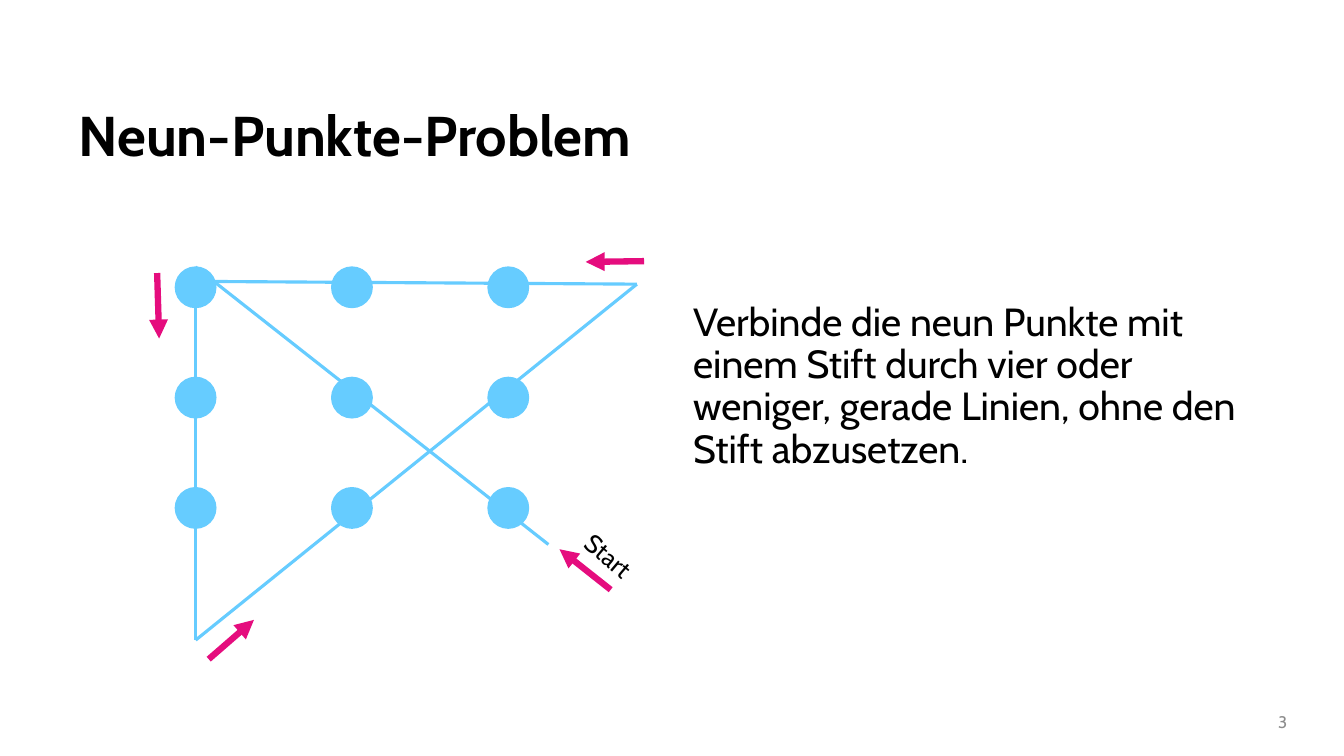
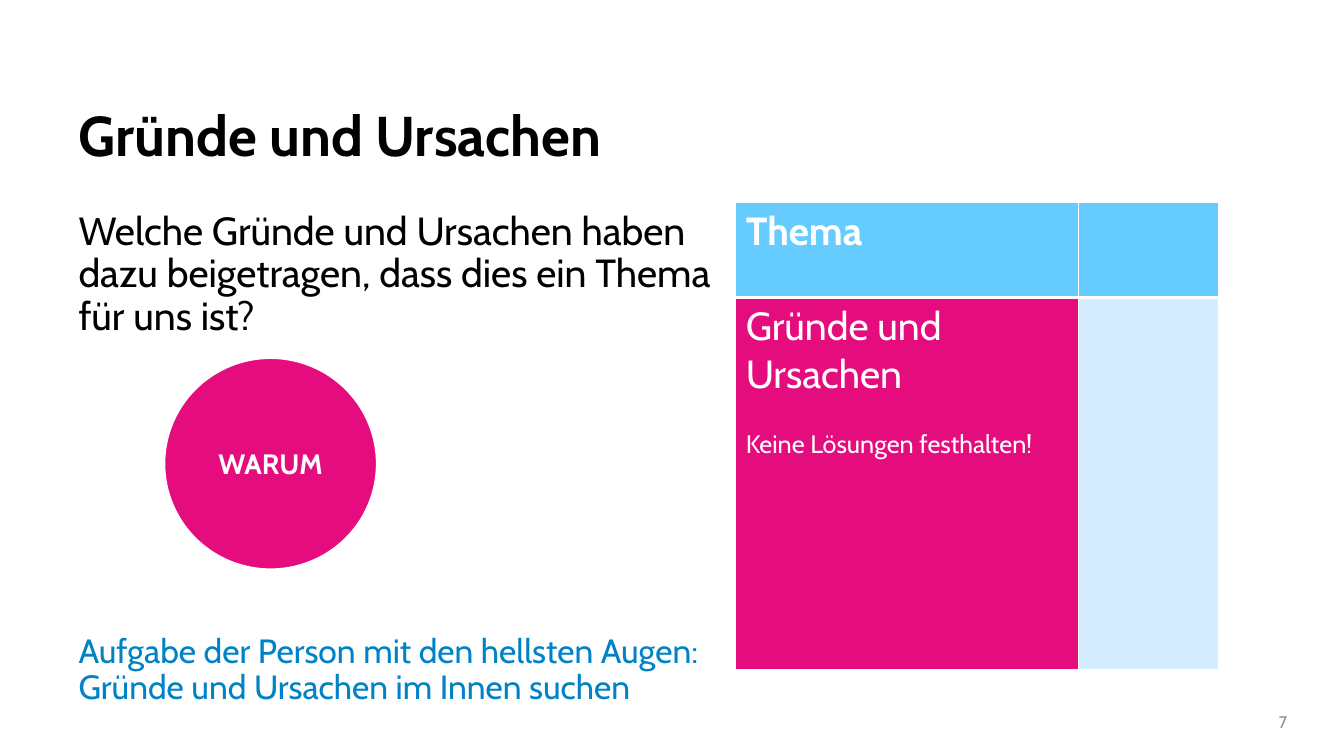
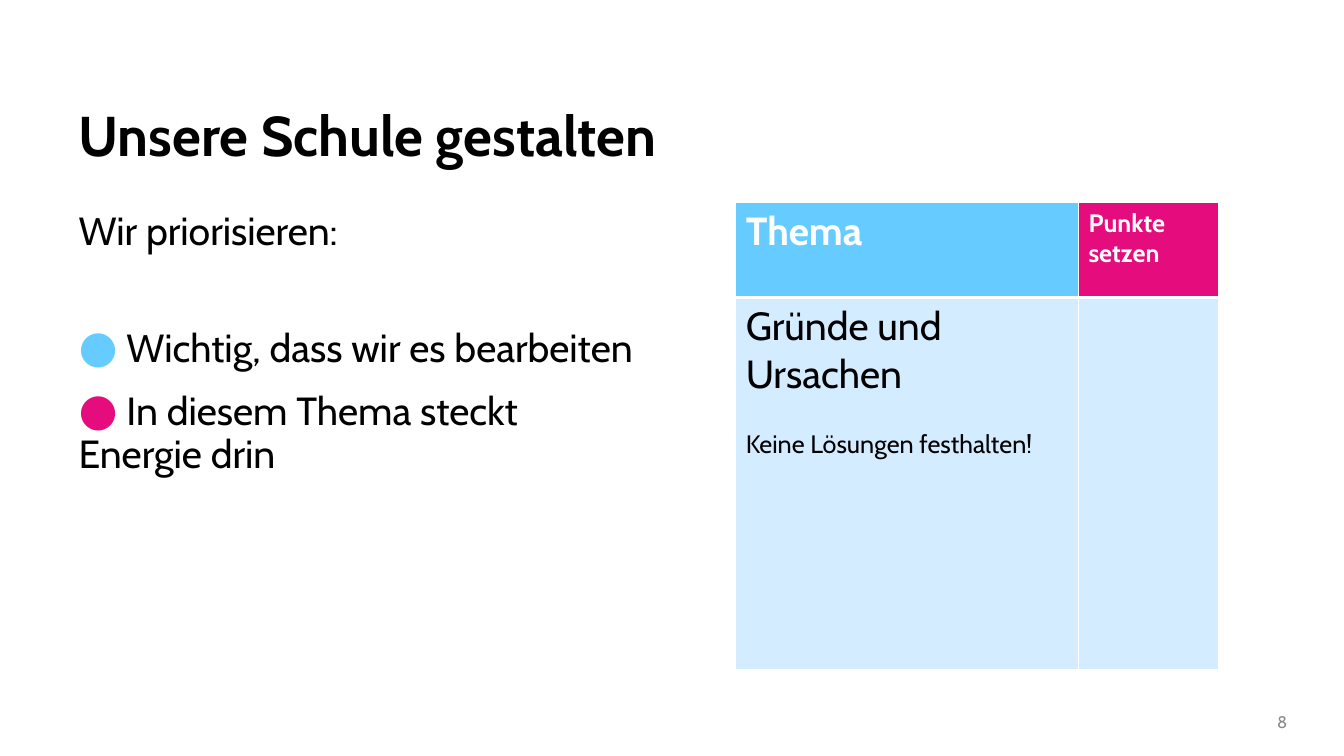
from lxml import etree
from pptx import Presentation
from pptx.dml.color import RGBColor
from pptx.enum.shapes import MSO_CONNECTOR, MSO_SHAPE
from pptx.enum.text import MSO_ANCHOR, PP_ALIGN
from pptx.oxml.ns import qn
from pptx.util import Cm, Pt

FONT = "Cabin"
BLACK = RGBColor(0x00, 0x00, 0x00)
WHITE = RGBColor(0xFF, 0xFF, 0xFF)
GRAY = RGBColor(0x8C, 0x8C, 0x8C)
BLUE = RGBColor(0x66, 0xCC, 0xFF)
PALE_BLUE = RGBColor(0xD3, 0xEC, 0xFF)
DARK_BLUE = RGBColor(0x00, 0x82, 0xC7)
PINK = RGBColor(0xE5, 0x0D, 0x7E)
OVAL = MSO_SHAPE.OVAL
STRAIGHT = MSO_CONNECTOR.STRAIGHT
MIDDLE = MSO_ANCHOR.MIDDLE
CENTER = PP_ALIGN.CENTER
RIGHT = PP_ALIGN.RIGHT


def style(p, size, color, bold=False):
    for r in p.runs:
        r.font.name = FONT
        r.font.size = Pt(size)
        r.font.color.rgb = color
        r.font.bold = bold


def add_text(s, box, text, size, color=BLACK, bold=False, spacing=0.9):
    sp = s.shapes.add_textbox(*[Cm(v) for v in box])
    tf = sp.text_frame
    tf.word_wrap = True
    tf.text = text
    for p in tf.paragraphs:
        p.line_spacing = spacing
        style(p, size, color, bold)
    return sp


prs = Presentation()
prs.slide_width = Cm(33.87)
prs.slide_height = Cm(19.05)

slides = []
for title, number in [
    ("Neun-Punkte-Problem", "3"),
    ("Gründe und Ursachen", "7"),
    ("Unsere Schule gestalten", "8"),
]:
    s = prs.slides.add_slide(prs.slide_layouts[6])
    add_text(s, (1.73, 2.59, 30.99, 2.01), title, 40, bold=True)
    sp = add_text(s, (28.7, 17.7, 3.99, 0.99), number, 12, GRAY, spacing=1.0)
    sp.text_frame.vertical_anchor = MIDDLE
    sp.text_frame.paragraphs[0].alignment = RIGHT
    slides.append(s)
puzzle, reasons, priorities = slides

add_text(
    puzzle,
    (17.22, 7.49, 14.35, 5.05),
    "Verbinde die neun Punkte mit einem Stift durch vier oder weniger, "
    "gerade Linien, ohne den Stift abzusetzen.",
    28,
)
for row in range(3):
    for col in range(3):
        sp = puzzle.shapes.add_shape(
            OVAL, Cm(4.42 + 3.94 * col), Cm(6.73 + 2.78 * row), Cm(1.02), Cm(1.02)
        )
        sp.shadow.inherit = False
        sp.fill.solid()
        sp.fill.fore_color.rgb = BLUE
        sp.line.color.rgb = BLUE
        sp.line.width = Pt(1)

strokes = [
    (4.93, 16.13, 4.93, 6.73),
    (4.93, 7.09, 16.05, 7.16),
    (16.05, 7.16, 4.93, 16.13),
    (4.93, 6.73, 13.82, 13.72),
]
arrows = [
    (15.39, 14.86, 14.1, 13.84),
    (3.96, 6.88, 4.01, 8.53),
    (5.26, 16.61, 6.4, 15.62),
    (16.23, 6.58, 14.76, 6.6),
]
for lines, color, width in [(strokes, BLUE, 2.25), (arrows, PINK, 4.5)]:
    for ends in lines:
        line = puzzle.shapes.add_connector(STRAIGHT, *[Cm(v) for v in ends])
        line.line.width = Pt(width)
        line.line.color.rgb = color
        spPr = line.element.spPr
        if lines is arrows:
            etree.SubElement(spPr.find(qn("a:ln")), qn("a:tailEnd"), type="triangle")
        etree.SubElement(spPr, qn("a:effectLst"))
sp = add_text(puzzle, (14.43, 13.51, 1.85, 1.02), "Start", 18, spacing=1.0)
sp.text_frame.word_wrap = False
sp.rotation = 40.2

sp = add_text(
    reasons,
    (1.73, 5.21, 16.81, 13.84),
    "Welche Gründe und Ursachen haben dazu beigetragen, dass dies ein Thema für uns ist?\n"
    "Aufgabe der Person mit den hellsten Augen: Gründe und Ursachen im Innen suchen",
    28,
)
p = sp.text_frame.paragraphs[1]
p.space_before = Pt(211)
style(p, 24, DARK_BLUE)

sp = reasons.shapes.add_shape(OVAL, Cm(4.14), Cm(9.02), Cm(5.36), Cm(5.33))
sp.shadow.inherit = False
sp.fill.solid()
sp.fill.fore_color.rgb = PINK
sp.line.color.rgb = WHITE
sp.line.width = Pt(1.5)
tf = sp.text_frame
tf.text = "WARUM"
tf.vertical_anchor = MIDDLE
tf.paragraphs[0].alignment = CENTER
style(tf.paragraphs[0], 20, WHITE, True)

sp = add_text(priorities, (1.73, 5.21, 14.83, 11.99), "Wir priorisieren:", 28)
for color, text, gap in [
    (BLUE, " Wichtig, dass wir es bearbeiten", 50),
    (PINK, " In diesem Thema steckt Energie drin", 10),
]:
    p = sp.text_frame.add_paragraph()
    p.line_spacing = 0.9
    p.space_before = Pt(gap)
    for part in ("●", text):
        p.add_run().text = part
    style(p, 28, BLACK)
    p.runs[0].font.size = Pt(32)
    p.runs[0].font.color.rgb = color

for s, points, points_fill, reasons_fill, reasons_color in [
    (reasons, "", BLUE, PINK, WHITE),
    (priorities, "Punkte setzen", PINK, PALE_BLUE, BLACK),
]:
    table = s.shapes.add_table(2, 2, Cm(18.54), Cm(5.11), Cm(12.17), Cm(11.76)).table
    for column, width in zip(table.columns, (8.64, 3.53)):
        column.width = Cm(width)
    for row, height in zip(table.rows, (2.39, 9.37)):
        row.height = Cm(height)
    cells = [
        (BLUE, WHITE, [("Thema", 28)]),
        (points_fill, WHITE, [(points, 18)]),
        (reasons_fill, reasons_color,
         [("Gründe und Ursachen", 28), ("Keine Lösungen festhalten!", 18)]),
        (PALE_BLUE, BLACK, []),
    ]
    for i, (fill, color, texts) in enumerate(cells):
        header = i < 2
        cell = table.cell(i // 2, i % 2)
        tcPr = cell._tc.get_or_add_tcPr()
        thick = "a:lnB" if header else "a:lnT"
        for side in ("a:lnL", "a:lnR", "a:lnT", "a:lnB"):
            width = Pt(3 if side == thick else 1)
            ln = etree.SubElement(tcPr, qn(side), w=str(width))
            solid = etree.SubElement(ln, qn("a:solidFill"))
            etree.SubElement(solid, qn("a:srgbClr"), val=str(WHITE))
        cell.fill.solid()
        cell.fill.fore_color.rgb = fill
        cell.text_frame.text = "\n".join(text for text, size in texts)
        for p, (text, size) in zip(cell.text_frame.paragraphs, texts):
            style(p, size, color, header)
        if len(texts) > 1:
            p.space_before = Pt(22)

prs.save("out.pptx")
